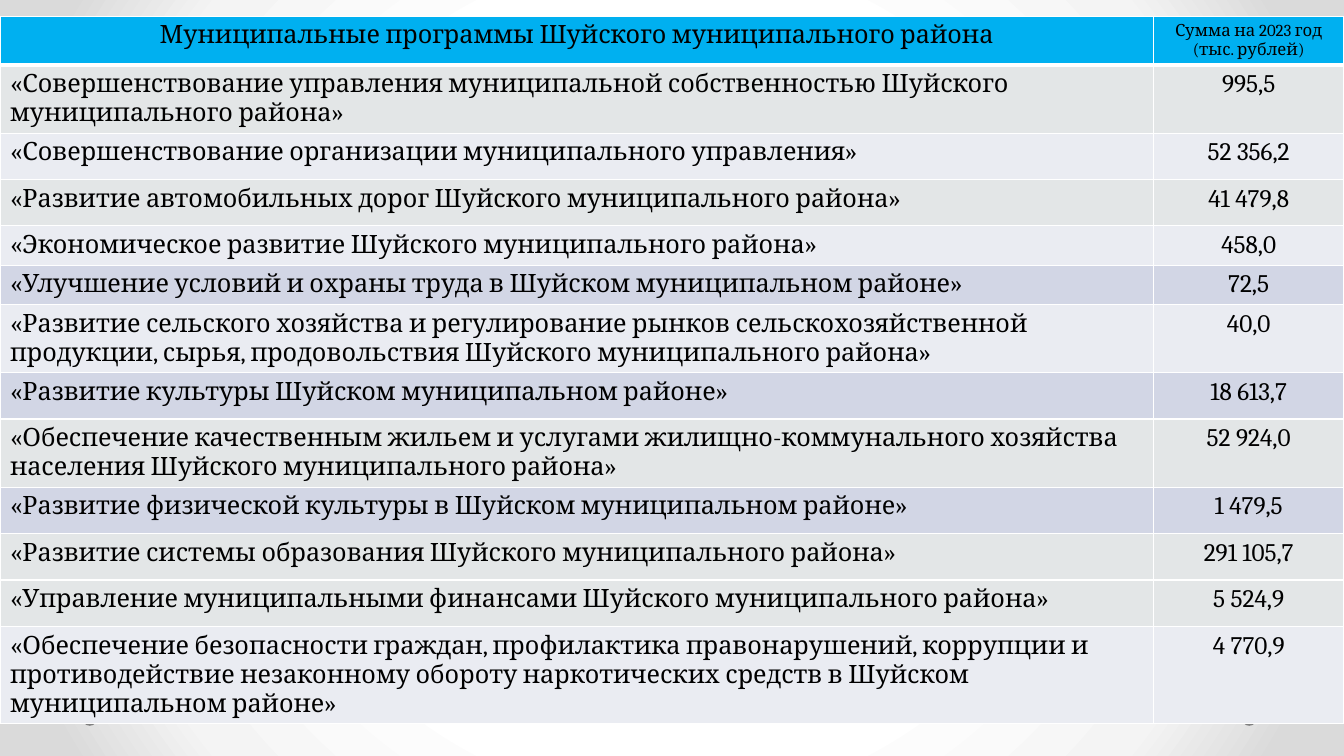
import pptx
import pptx.util
import pptx.oxml
import pptx.oxml.ns
from pptx.dml.color import RGBColor
from pptx.enum.shapes import MSO_SHAPE
from pptx.enum.text import PP_ALIGN
from pptx.util import Inches, Pt

BLACK = RGBColor(0x00, 0x00, 0x00)
WHITE = RGBColor(0xFF, 0xFF, 0xFF)
BLUE = RGBColor(0x00, 0xB0, 0xF0)
GRAY = RGBColor(0x80, 0x80, 0x80)
MIST = RGBColor(0xE3, 0xE6, 0xE7)
PALE = RGBColor(0xEA, 0xEC, 0xF2)
LILAC = RGBColor(0xD2, 0xD6, 0xE5)
NSDECL = pptx.oxml.ns.nsdecls("a", "p")

HEAD = ("Муниципальные программы Шуйского муниципального района",
        "Сумма на 2023 год (тыс. рублей)")
# name, sum, fill, height
ROWS = [
    ("«Совершенствование управления муниципальной собственностью Шуйского "
     "муниципального района»", "995,5", MIST, 0.52),
    ("«Совершенствование организации муниципального управления»",
     "52 356,2", PALE, 0.46),
    ("«Развитие автомобильных дорог Шуйского муниципального района»",
     "41 479,8", MIST, 0.46),
    ("«Экономическое развитие Шуйского муниципального района»",
     "458,0", PALE, 0.23),
    ("«Улучшение условий и охраны труда в Шуйском муниципальном районе»",
     "72,5", LILAC, 0.35),
    ("«Развитие сельского хозяйства и регулирование рынков "
     "сельскохозяйственной продукции, сырья, продовольствия Шуйского "
     "муниципального района»", "40,0", PALE, 0.35),
    ("«Развитие культуры Шуйском муниципальном районе»",
     "18 613,7", LILAC, 0.46),
    ("«Обеспечение качественным жильем и услугами жилищно-коммунального "
     "хозяйства населения Шуйского муниципального района»",
     "52 924,0", MIST, 0.46),
    ("«Развитие физической культуры в Шуйском муниципальном районе»",
     "1 479,5", LILAC, 0.46),
    ("«Развитие системы образования Шуйского муниципального района»",
     "291 105,7", MIST, 0.46),
    ("«Управление муниципальными финансами Шуйского муниципального района»",
     "5 524,9", MIST, 0.46),
    ("«Обеспечение безопасности граждан, профилактика правонарушений, "
     "коррупции и противодействие незаконному обороту наркотических средств "
     "в Шуйском муниципальном районе»", "4 770,9", PALE, 0.46),
]


def line(tag, color, width):
    """Return a solid line element, for a cell edge or a text outline."""
    return pptx.oxml.parse_xml(
        f'<a:{tag} {NSDECL} w="{int(Pt(width))}"><a:solidFill>'
        f'<a:srgbClr val="{color}"/></a:solidFill></a:{tag}>')


def write(frame, text, size=18, align=PP_ALIGN.LEFT, color=BLACK,
          font="Cambria"):
    para = frame.paragraphs[0]
    para.alignment = align
    run = para.add_run()
    run.text = text
    run.font.name = font
    run.font.size = Pt(size)
    run.font.bold = False
    run.font.color.rgb = color
    run.font._element.insert(0, line("ln", color, 0.75))


class Deck:
    def __init__(self):
        self.file = pptx.Presentation()
        self.file.slide_width = Inches(13.33)
        self.file.slide_height = Inches(7.5)
        self.slide = self.file.slides.add_slide(self.file.slide_layouts[6])

    def glow(self, stops):
        """Fill the background with a gradient spreading from the centre."""
        marks = "".join(f'<a:gs pos="{pos * 1000}"><a:srgbClr val="{color}"/>'
                        '</a:gs>' for pos, color in stops)
        back = pptx.oxml.parse_xml(
            f'<p:bg {NSDECL}><p:bgPr><a:gradFill rotWithShape="1">'
            f'<a:gsLst>{marks}</a:gsLst><a:path path="circle">'
            '<a:fillToRect l="50000" t="50000" r="50000" b="50000"/></a:path>'
            '</a:gradFill><a:effectLst/></p:bgPr></p:bg>')
        self.slide.element.cSld.insert(0, back)

    def dot(self, left, top):
        dot = self.slide.shapes.add_shape(
            MSO_SHAPE.OVAL, Inches(left), Inches(top),
            Inches(0.12), Inches(0.09))
        dot.shadow.inherit = False
        dot.fill.solid()
        dot.fill.fore_color.rgb = GRAY
        dot.line.fill.background()

    def cell(self, cell, text, fill, top=1, bottom=1, **style):
        write(cell.text_frame, text, **style)
        cell.fill.solid()
        cell.fill.fore_color.rgb = fill
        props = cell._tc.get_or_add_tcPr()
        edges = (("lnL", 1), ("lnR", 1), ("lnT", top), ("lnB", bottom))
        for spot, (tag, width) in enumerate(edges):
            props.insert(spot, line(tag, WHITE, width))

    def table(self, head, rows):
        frame = self.slide.shapes.add_table(
            len(rows) + 1, 2, 0, Inches(0.16), Inches(13.33), Inches(7.14))
        table = frame.table
        table.first_row = table.horz_banding = False
        for col, width in zip(table.columns, (11.44, 1.89)):
            col.width = Inches(width)
        table.rows[0].height = Inches(0.23)
        for col, (text, size) in enumerate(zip(head, (18, 12))):
            self.cell(table.cell(0, col), text, BLUE, bottom=3, size=size,
                      align=PP_ALIGN.CENTER)
        for row, (name, total, fill, height) in enumerate(rows, 1):
            table.rows[row].height = Inches(height)
            top = 3 if row == 1 else 1
            self.cell(table.cell(row, 0), name, fill, top)
            self.cell(table.cell(row, 1), total, fill, top,
                      align=PP_ALIGN.CENTER)
        frame.height = Inches(7.14)


def main():
    deck = Deck()
    deck.glow([(50, "FFFFFF"), (76, "F4F4F4"), (92, "DADADA")])
    for left in (12.33, 0.83):
        deck.dot(left, 7.11)
    deck.table(HEAD, ROWS)
    deck.file.save("out.pptx")


if __name__ == "__main__":
    main()
